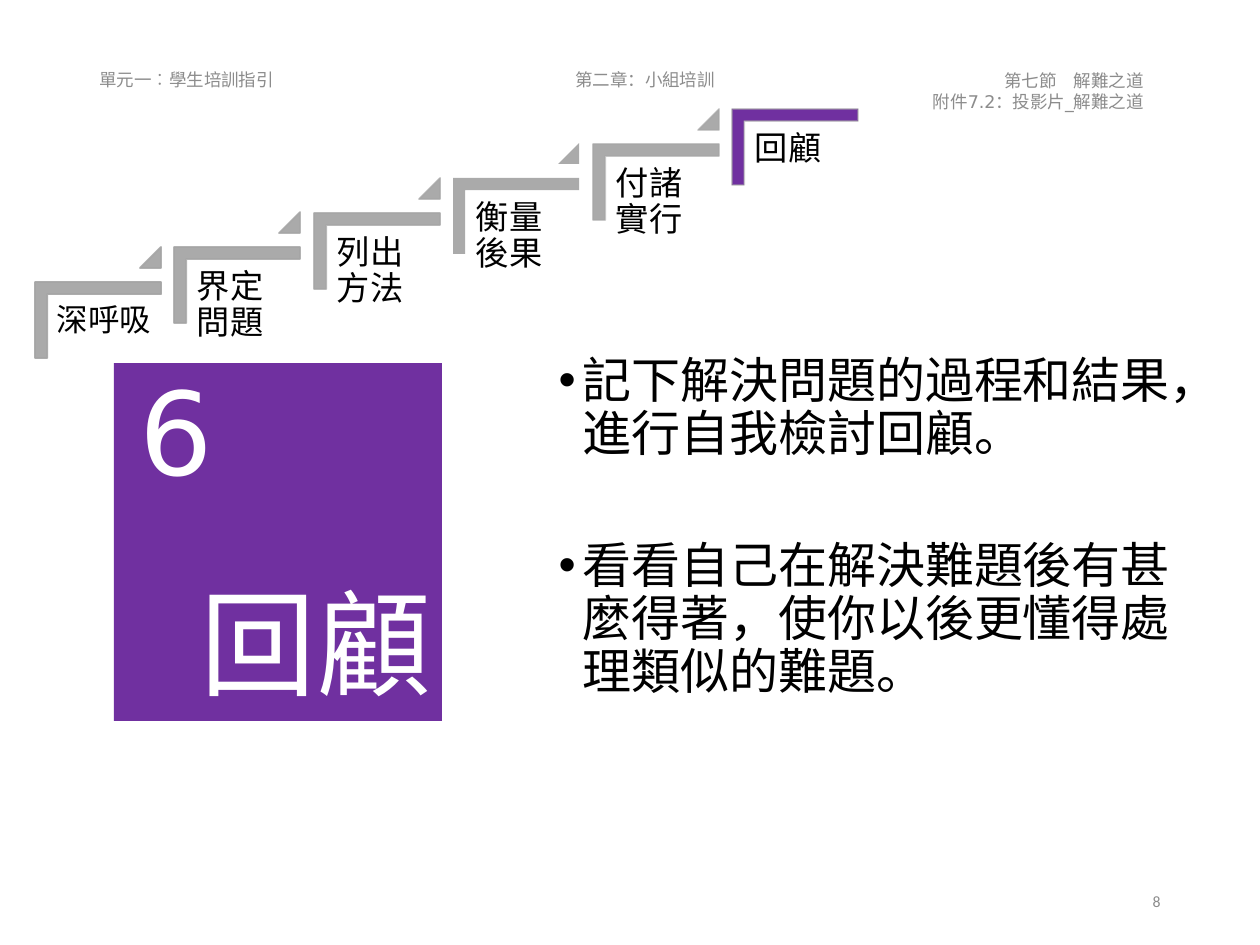
from pptx import Presentation
from pptx.util import Pt
from pptx.dml.color import RGBColor
from pptx.enum.shapes import MSO_SHAPE
from pptx.enum.text import MSO_ANCHOR, MSO_AUTO_SIZE, PP_ALIGN
from lxml import etree

LEFT, MID, RIGHT = PP_ALIGN.LEFT, PP_ALIGN.CENTER, PP_ALIGN.RIGHT
TOP, CENTER, BASE = MSO_ANCHOR.TOP, MSO_ANCHOR.MIDDLE, MSO_ANCHOR.BOTTOM
CORNER, WEDGE, RECT = MSO_SHAPE.CORNER, MSO_SHAPE.RIGHT_TRIANGLE, MSO_SHAPE.RECTANGLE
WEDGE = MSO_SHAPE.ISOSCELES_TRIANGLE
NS = "http://schemas.openxmlformats.org/drawingml/2006/main"
SCALE = 914400 / 126
SANS, BODY = "DejaVu Sans", "Calibri"
HEX = {"gray": "8C8C8C", "step": "AAAAAA", "edge": "A5A5A5",
       "now": "7030A0", "white": "FFFFFF", "black": "000000"}

# Content: text, box in px, alignment
heads = [
    (["單元一︰學生培訓指引"], (87, 55, 426, 50), LEFT),
    (["第二章：小組培訓"], (432, 55, 426, 50), MID),
    (["第七節　解難之道", "附件7.2：投影片_解難之道"], (730, 66, 426, 50), RIGHT),
]
# Label, size, inset, outlined
steps = [
    ("深呼吸", 18, 9, True),
    ("界定問題", 19, 10, True),
    ("列出方法", 19, 10, True),
    ("衡量後果", 19, 10, False),
    ("付諸實行", 19, 10, True),
    ("回顧", 19, 10, True),
]
points = [
    "記下解決問題的過程和結果，進行自我檢討回顧。",
    "看看自己在解決難題後有甚麼得著，使你以後更懂得處理類似的難題。",
]
RUN, RISE = 697, 173  # whole span of the stairs


def px(n):
    return round(n * SCALE)


def color(name):
    return RGBColor.from_string(HEX[name])


def fade(fill, pct):
    tint = fill._xPr.find(f".//{{{NS}}}srgbClr")
    etree.SubElement(tint, f"{{{NS}}}alpha", val=str(pct * 1000))


def write(frame, lines, size, font, ink, align=LEFT, anchor=TOP, inset=None, lead=None):
    frame.word_wrap = True
    frame.vertical_anchor = anchor
    if inset is not None:
        frame.margin_left = frame.margin_right = px(inset)
        frame.margin_top = frame.margin_bottom = px(inset)
    for i, line in enumerate(lines):
        para = frame.add_paragraph() if i else frame.paragraphs[0]
        para.alignment = align
        if lead:
            para.line_spacing = lead
        run = para.add_run()
        run.text = line
        run.font.size, run.font.name = Pt(size), font
        run.font.color.rgb = color(ink)


def label(box, *args, **opts):
    shape = slide.shapes.add_textbox(*map(px, box))
    write(shape.text_frame, *args, **opts)


def block(kind, box, fill, edge=None):
    shape = slide.shapes.add_shape(kind, *map(px, box))
    shape.shadow.inherit = False
    shape.fill.solid()
    shape.fill.fore_color.rgb = color(fill)
    if edge:
        shape.line.width = Pt(1)
        shape.line.color.rgb = color("edge")
        fade(shape.line.fill, edge)
    else:
        shape.line.fill.background()
    return shape


deck = Presentation()
deck.slide_width, deck.slide_height = px(1260), px(945)
slide = deck.slides.add_slide(deck.slide_layouts[1])
title = slide.shapes.title.element
title.getparent().remove(title)

# Page header
for lines, box, align in heads:
    label(box, lines, 10, SANS, "gray", align, CENTER)

# Bullet points
body = slide.placeholders[1]
body.left, body.top, body.width, body.height = map(px, (546, 350, 650, 417))
write(body.text_frame, points, 28, BODY, "black", lead=0.9)
body.text_frame.auto_size = MSO_AUTO_SIZE.NONE
for para, gap in zip(body.text_frame.paragraphs, (7.5, 45)):
    para.space_before = Pt(gap)
    props = para._p.get_or_add_pPr()
    props.set("marL", str(px(24)))
    props.set("indent", str(px(-24)))
    etree.SubElement(props, f"{{{NS}}}buFont", typeface="Arial")
    etree.SubElement(props, f"{{{NS}}}buChar", char="•")

# Stairs, with outlines that fade by 4 % from part to part
last = len(steps) - 1
for i, (text, size, inset, lined) in enumerate(steps):
    x, y = round(RUN * i / last), -round(RISE * i / last)
    edge = 90 - 8 * i
    stair = block(CORNER, (60 + x, 257 + y, 76, 126),
                  "now" if i == last else "step", edge if lined else None)
    stair.rotation = 90
    stair.adjustments[0] = stair.adjustments[1] = 0.16
    label((48 + x, 295 + y, 114, 100), [text], size, BODY, "black",
          inset=inset, lead=0.9)
    if i < last:
        wedge = block(WEDGE, (140 + x, 247 + y, 21, 21), "step",
                      edge - 4 if lined else None)
        wedge.adjustments[0] = 1

# Current step card
card = block(RECT, (114, 363, 328, 358), "now")
write(card.text_frame, ["回顧"], 66, BODY, "white", RIGHT, BASE, 10)
label((127, 354, 139, 152), ["6"], 66, SANS, "white")

# Page number
label((890, 876, 283, 50), ["8"], 9, BODY, "gray", RIGHT, CENTER)

deck.save("out.pptx")
